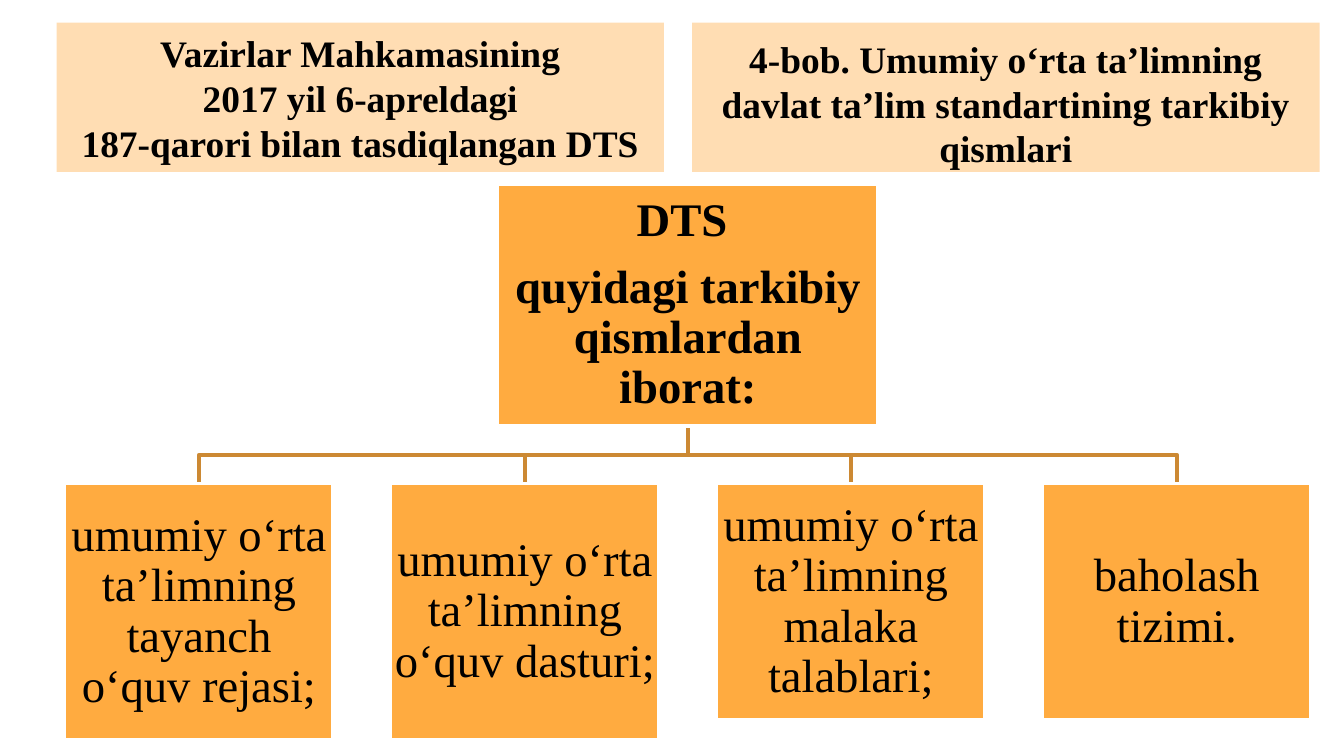
from dataclasses import dataclass

import pptx
import pptx.dml.color
import pptx.enum.shapes
import pptx.enum.text
import pptx.util

Cm = pptx.util.Cm
Pt = pptx.util.Pt
Color = pptx.dml.color.RGBColor
Anchor = pptx.enum.text.MSO_ANCHOR


@dataclass(frozen=True)
class Theme:
    font: str = "Times New Roman"
    text: Color = Color(0x00, 0x00, 0x00)
    header_fill: Color = Color(0xFF, 0xDD, 0xB3)
    node_fill: Color = Color(0xFF, 0xAB, 0x40)
    node_line: Color = Color(0xFF, 0xFF, 0xFF)
    branch: Color = Color(0xCC, 0x89, 0x33)
    header_size: float = 20
    node_size: float = 25
    line_width: float = 2


@dataclass(frozen=True)
class Box:
    """A rectangle in centimetres with its paragraphs."""
    left: float
    top: float
    width: float
    height: float
    paragraphs: tuple[str, ...]
    bold: bool = False

    @property
    def center(self) -> float:
        return self.left + self.width / 2

    @property
    def bottom(self) -> float:
        return self.top + self.height


THEME = Theme()
HEADER_TOP, HEADER_HEIGHT = 0.43, 2.82
TREE_CENTER, CHILD_TOP = 13.0, 9.14
CHILD_WIDTH, CHILD_STEP = 5.08, 6.16

CHILDREN = (
    ("umumiy o‘rta ta’limning tayanch o‘quv rejasi;", 4.85),
    ("umumiy o‘rta ta’limning o‘quv dasturi;", 4.85),
    ("umumiy o‘rta ta’limning malaka talablari;", 4.47),
    ("baholash tizimi.", 4.47),
)


def set_attributes(target: object, values: dict) -> None:
    for name, value in values.items():
        setattr(target, name, value)


def draw_box(slide, box: Box, fill: Color, size: float, inset: float,
             anchor, spacing: float):
    shape = slide.shapes.add_shape(
        pptx.enum.shapes.MSO_SHAPE.RECTANGLE,
        Cm(box.left), Cm(box.top), Cm(box.width), Cm(box.height))
    shape.shadow.inherit = False
    shape.fill.solid()
    shape.fill.fore_color.rgb = fill
    shape.line.fill.background()
    frame = shape.text_frame
    margins = dict.fromkeys(
        ("margin_left", "margin_top", "margin_right", "margin_bottom"), Cm(inset))
    set_attributes(frame, {"word_wrap": True, "vertical_anchor": anchor, **margins})
    frame.text = "\n".join(box.paragraphs)
    for paragraph in frame.paragraphs:
        set_attributes(paragraph, {
            "alignment": pptx.enum.text.PP_ALIGN.CENTER, "line_spacing": spacing})
        set_attributes(paragraph.font, {
            "name": THEME.font, "size": Pt(size), "bold": box.bold})
        paragraph.font.color.rgb = THEME.text
    for paragraph in frame.paragraphs[:-1]:
        paragraph.space_after = Pt(0.35 * size)
    return shape


def draw_header(slide, box: Box, anchor) -> None:
    draw_box(slide, box, THEME.header_fill, THEME.header_size, 0.25, anchor, 1.0)


def draw_node(slide, box: Box) -> None:
    shape = draw_box(slide, box, THEME.node_fill, THEME.node_size, 0.04,
                     Anchor.MIDDLE, 0.9)
    shape.line.color.rgb = THEME.node_line
    shape.line.width = Pt(THEME.line_width)


def draw_branch(slide, parent: Box, child: Box) -> None:
    """Draw the angled line from the parent's bottom to the child's top."""
    middle = (parent.bottom + child.top) / 2
    builder = slide.shapes.build_freeform(Cm(parent.center), Cm(parent.bottom))
    builder.add_line_segments(
        [(Cm(parent.center), Cm(middle)), (Cm(child.center), Cm(middle)),
         (Cm(child.center), Cm(child.top))], close=False)
    shape = builder.convert_to_shape()
    shape.shadow.inherit = False
    shape.fill.background()
    shape.line.color.rgb = THEME.branch
    shape.line.width = Pt(THEME.line_width)


def main() -> None:
    presentation = pptx.Presentation()
    set_attributes(presentation, {"slide_width": Cm(25.4), "slide_height": Cm(14.29)})
    slide = presentation.slides.add_slide(presentation.slide_layouts[6])

    decree = Box(1.07, HEADER_TOP, 11.48, HEADER_HEIGHT, (
        "Vazirlar Mahkamasining\v2017 yil 6-apreldagi\v"
        "187-qarori bilan tasdiqlangan DTS",), bold=True)
    chapter = Box(13.08, HEADER_TOP, 11.86, HEADER_HEIGHT, (
        "4-bob. Umumiy o‘rta ta’limning davlat ta’lim standartining "
        "tarkibiy qismlari",), bold=True)
    draw_header(slide, chapter, Anchor.TOP)

    root_width = 7.19
    root = Box(TREE_CENTER - root_width / 2, 3.48, root_width, 4.57,
               ("DTS ", "quyidagi tarkibiy qismlardan iborat:"), bold=True)
    row_width = (len(CHILDREN) - 1) * CHILD_STEP + CHILD_WIDTH
    row_left = TREE_CENTER - row_width / 2
    children = [
        Box(row_left + index * CHILD_STEP, CHILD_TOP, CHILD_WIDTH, height, (text,))
        for index, (text, height) in enumerate(CHILDREN)]
    for child in children:
        draw_branch(slide, root, child)
    for node in (root, *children):
        draw_node(slide, node)

    draw_header(slide, decree, Anchor.MIDDLE)
    presentation.save("out.pptx")


if __name__ == "__main__":
    main()
